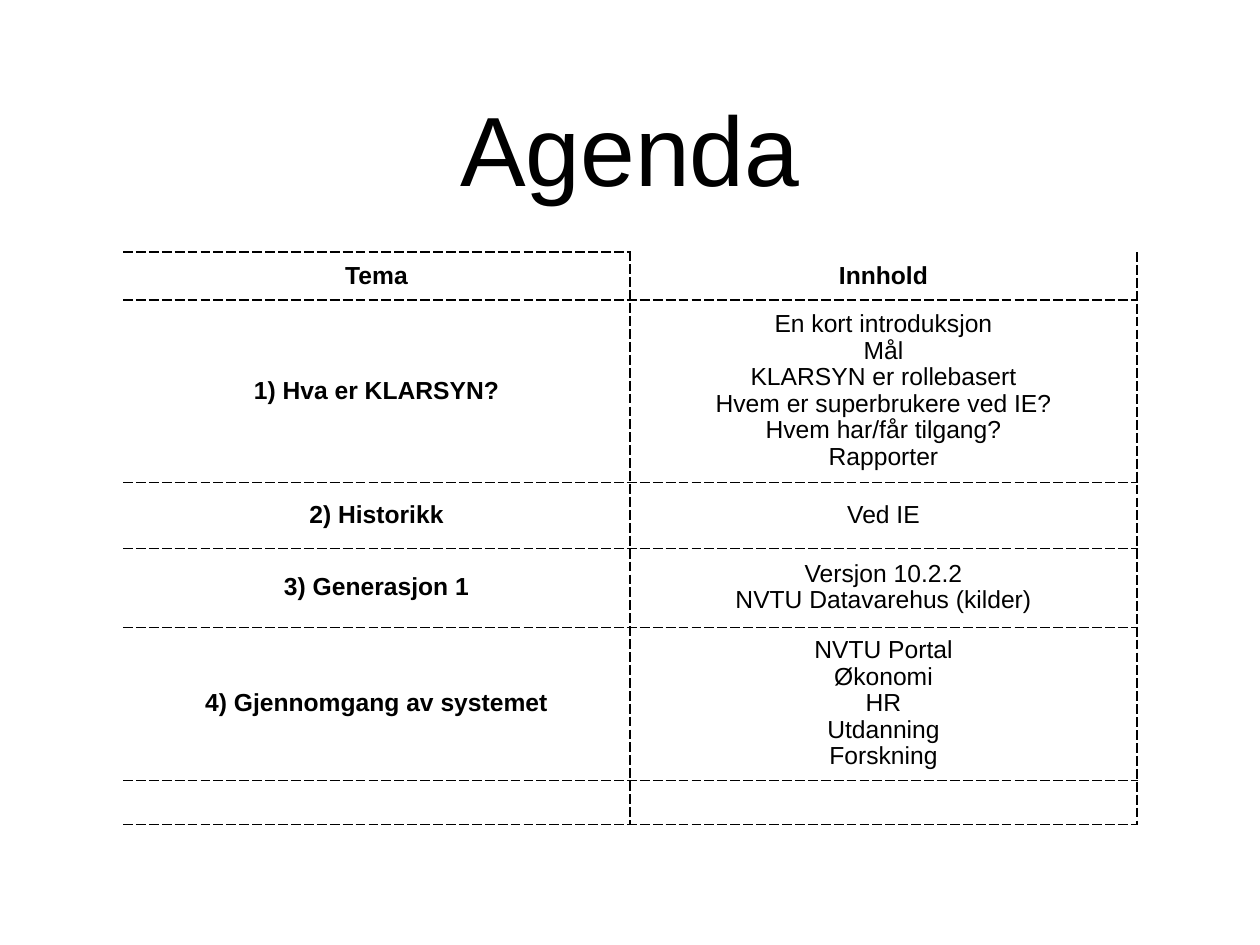
from dataclasses import dataclass
from lxml.etree import SubElement
from pptx import Presentation
from pptx.dml.color import RGBColor
from pptx.enum.text import MSO_ANCHOR as Anchor, PP_ALIGN as Align
from pptx.oxml.ns import qn
from pptx.util import Pt

PX = 10320  # EMU in one px


@dataclass(frozen=True)
class Theme:
    font: str = "Arial"
    ink: str = "000000"
    paper: str = "FFFFFF"
    title_size: int = 80
    body_size: int = 20
    rule_width: int = 1
    line_spacing: float = 0.97
    cell_margin: int = 5


THEME = Theme()

AGENDA = [
    ("Tema", ["Innhold"]),
    ("1) Hva er KLARSYN?", ["En kort introduksjon", "Mål", "KLARSYN er rollebasert",
                            "Hvem er superbrukere ved IE?", "Hvem har/får tilgang?",
                            "Rapporter"]),
    ("2) Historikk", ["Ved IE"]),
    ("3) Generasjon 1", ["Versjon 10.2.2", "NVTU Datavarehus (kilder)"]),
    ("4) Gjennomgang av systemet", ["NVTU Portal", "Økonomi", "HR", "Utdanning",
                                    "Forskning"]),
    ("", []),
]
ROW_HEIGHTS = [48, 175, 66, 79, 153, 44]


def emu(*lengths):
    return [length * PX for length in lengths]


def write_lines(frame, lines, size, bold=False, spacing=1.0):
    for index, line in enumerate(lines):
        paragraph = frame.paragraphs[0] if index == 0 else frame.add_paragraph()
        paragraph.text = line
        paragraph.alignment = Align.CENTER
        paragraph.line_spacing = spacing
        font = paragraph.font
        font.name, font.size, font.bold = THEME.font, Pt(size), bold
        font.color.rgb = RGBColor.from_string(THEME.ink)


def set_borders(cell, ruled_sides):
    """Dash the named sides (L, R, T, B) and clear the others."""
    properties = cell._tc.get_or_add_tcPr()
    for position, side in enumerate("LRTB"):
        rule = SubElement(properties, qn(f"a:ln{side}"), w=str(Pt(THEME.rule_width)))
        if side in ruled_sides:
            fill = SubElement(rule, qn("a:solidFill"))
            SubElement(fill, qn("a:srgbClr"), val=THEME.ink)
            SubElement(rule, qn("a:prstDash"), val="lgDash")
        else:
            SubElement(rule, qn("a:noFill"))
        properties.insert(position, rule)  # borders precede the cell fill


def add_title(slide, box, heading):
    frame = slide.shapes.add_textbox(*emu(*box)).text_frame
    frame.word_wrap = True
    frame.vertical_anchor = Anchor.MIDDLE
    frame.margin_left = frame.margin_right = frame.margin_top = frame.margin_bottom = 0
    write_lines(frame, [heading], THEME.title_size)


def add_agenda(slide, box):
    table = slide.shapes.add_table(len(AGENDA), 2, *emu(*box)).table
    table.first_row = table.horz_banding = False
    for column in table.columns:
        column.width = box[2] * PX // 2
    for row_index, (topic, contents) in enumerate(AGENDA):
        table.rows[row_index].height = ROW_HEIGHTS[row_index] * PX
        for column_index, lines in enumerate(([topic] if topic else [], contents)):
            cell = table.cell(row_index, column_index)
            cell.vertical_anchor = Anchor.MIDDLE
            margin = THEME.cell_margin * PX
            cell.margin_left = cell.margin_right = margin
            cell.margin_top = cell.margin_bottom = margin
            cell.fill.background()
            # Headings and topics are bold; the header is open above "Innhold"
            is_bold = row_index == 0 or column_index == 0
            write_lines(cell.text_frame, lines, THEME.body_size, is_bold,
                        THEME.line_spacing)
            sides = "RTB" if column_index == 0 else "LRB" if row_index == 0 else "LRTB"
            set_borders(cell, sides)


def main():
    deck = Presentation()
    deck.slide_width, deck.slide_height = emu(1260, 945)
    slide = deck.slides.add_slide(deck.slide_layouts[6])
    slide.background.fill.solid()
    slide.background.fill.fore_color.rgb = RGBColor.from_string(THEME.paper)

    # Heading
    add_title(slide, (92, 43, 1076, 209), "Agenda")
    # Topics and their contents
    add_agenda(slide, (123, 252, 1014, sum(ROW_HEIGHTS)))

    deck.save("out.pptx")


if __name__ == "__main__":
    main()
